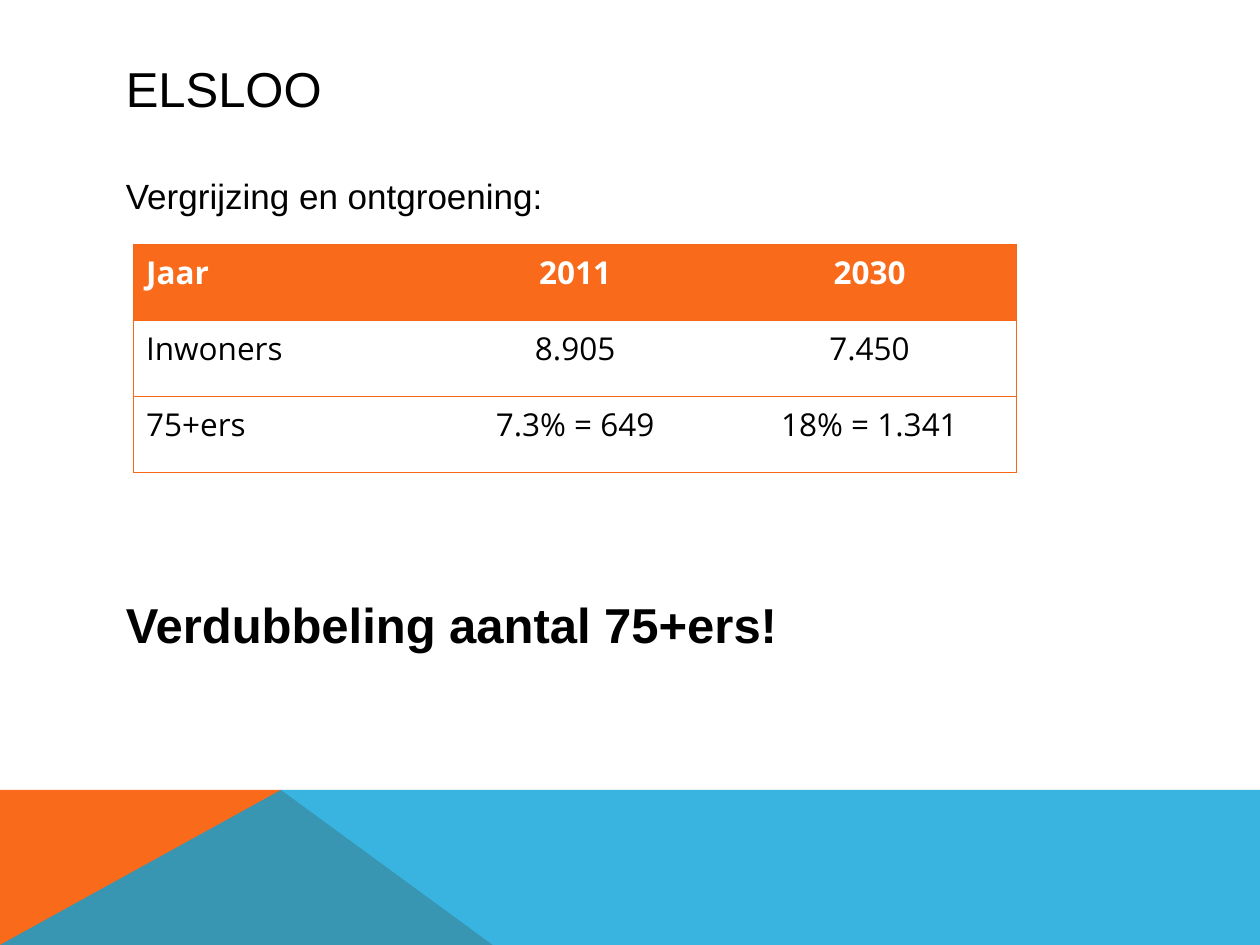
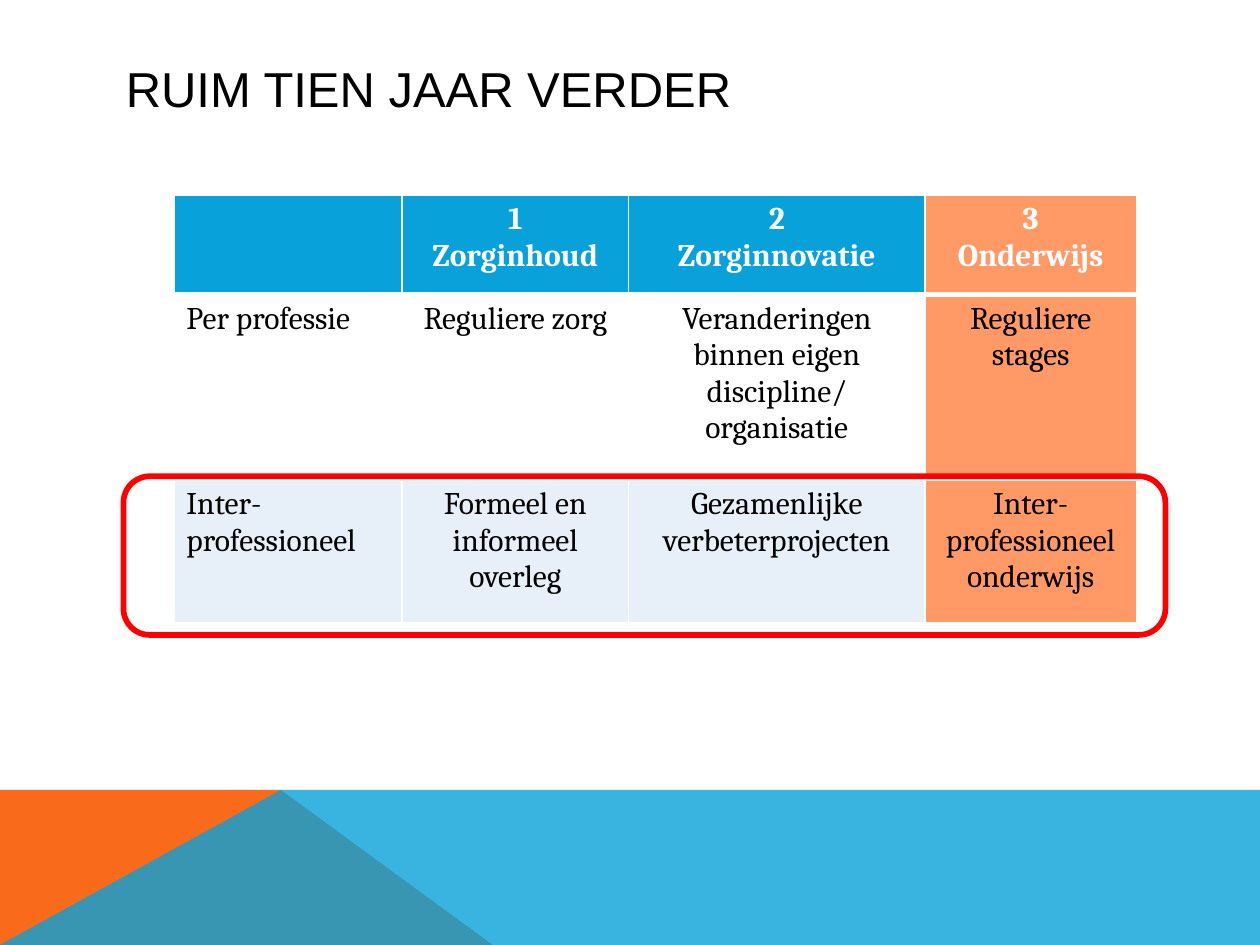
from dataclasses import dataclass
from lxml import etree
from pptx import Presentation
from pptx.dml.color import RGBColor
from pptx.enum.shapes import MSO_SHAPE
from pptx.enum.text import MSO_ANCHOR, PP_ALIGN
from pptx.oxml.ns import qn
from pptx.util import Inches, Pt

ROUND = MSO_SHAPE.ROUNDED_RECTANGLE
MIDDLE, TOP = MSO_ANCHOR.MIDDLE, MSO_ANCHOR.TOP
LEFT, CENTER = PP_ALIGN.LEFT, PP_ALIGN.CENTER


@dataclass(frozen=True)
class Theme:
    black: str = "000000"
    white: str = "FFFFFF"
    orange: str = "F96A1B"
    edge: str = "F96615"
    blue: str = "08A1D9"
    peach: str = "FF9966"
    pale: str = "E7F0F8"
    red: str = "FF0000"
    sans: str = "Arial"
    open: str = "Open Sans"
    serif: str = "Cambria"
    big: int = 28
    lead: int = 20
    cell: int = 18


T = Theme()

# Content
AGING = {
    "title": "ELSLOO",
    "lead": "Vergrijzing en ontgroening:",
    "claim": "Verdubbeling aantal 75+ers!",
    "rows": [
        ("Jaar", "2011", "2030"),
        ("Inwoners", "8.905", "7.450"),
        ("75+ers", "7.3% = 649", "18% = 1.341"),
    ],
}
CARE = {
    "title": "RUIM TIEN JAAR VERDER",
    "rows": [
        ("", "1\nZorginhoud", "2\nZorginnovatie", "3\nOnderwijs"),
        ("Per professie", "Reguliere zorg",
         "Veranderingen binnen eigen discipline/\norganisatie", "Reguliere stages"),
        ("Inter-professioneel", "Formeel en informeel overleg",
         "Gezamenlijke verbeterprojecten", "Inter-professioneel onderwijs"),
    ],
}

# Places, in inches
TITLE = (0.9, 0.4, 8.22, 0.6)
BODY = (0.9, 1.2, 8.22, 4.04)
FRAME = (0.98, 3.78, 8.27, 1.26)
BASE, BAND, PEAK, FOOT, WIDE = 7.5, 6.27, 2.23, 3.91, 10
WEDGE = [(0, BASE), (0, BAND), (PEAK, BAND), (FOOT, BASE)]
SWEEP = [(0, BASE), (PEAK, BAND), (WIDE, BAND), (WIDE, BASE)]


def color(code):
    return RGBColor.from_string(code)


def style(para, font, size, code=T.black, bold=False):
    for run in para.runs:
        run.font.name, run.font.size, run.font.bold = font, Pt(size), bold
        run.font.color.rgb = color(code)


def add_text(slide, box, text, anchor=TOP):
    frame = slide.shapes.add_textbox(*map(Inches, box)).text_frame
    frame.word_wrap = True
    frame.vertical_anchor = anchor
    frame.text = text
    return frame.paragraphs


def add_area(slide, points, code, alpha=None):
    start, *rest = [(Inches(x), Inches(y)) for x, y in points]
    pen = slide.shapes.build_freeform(*start)
    pen.add_line_segments(rest, close=True)
    area = pen.convert_to_shape()
    area.shadow.inherit = False
    area.line.fill.background()
    area.fill.solid()
    area.fill.fore_color.rgb = color(code)
    if alpha:
        tint = area.fill._xPr.find(qn("a:solidFill"))[0]
        etree.SubElement(tint, qn("a:alpha"), val=str(alpha * 1000))


def add_page(deck, title):
    """Add a slide with the shared band and title."""
    slide = deck.slides.add_slide(deck.slide_layouts[6])
    add_area(slide, WEDGE, T.orange)
    add_area(slide, SWEEP, T.blue, 80)
    style(add_text(slide, TITLE, title, MIDDLE)[0], T.sans, T.big)
    return slide


def set_edges(cell, edges):
    """Draw the sides L, R, T, B; each is (colour, points) or None."""
    props = cell._tc.get_or_add_tcPr()
    for side in "LRTB":
        edge = edges[side]
        line = etree.SubElement(props, qn("a:ln" + side))
        if edge:
            line.set("w", str(Pt(edge[1])))
            fill = etree.SubElement(line, qn("a:solidFill"))
            etree.SubElement(fill, qn("a:srgbClr"), val=edge[0])
        else:
            etree.SubElement(line, qn("a:noFill"))


def add_grid(slide, spot, rows, widths, heights, font, fill_of, edges_of):
    size = (sum(widths), sum(heights))
    table = slide.shapes.add_table(
        len(rows), len(widths), *map(Inches, spot + size)).table
    table.first_row = table.horz_banding = False
    for col, width in zip(table.columns, widths):
        col.width = Inches(width)
    for r, (row, height) in enumerate(zip(rows, heights)):
        table.rows[r].height = Inches(height)
        for c, text in enumerate(row):
            cell = table.cell(r, c)
            set_edges(cell, edges_of(r, c))
            code = fill_of(r, c)
            if code:
                cell.fill.solid()
                cell.fill.fore_color.rgb = color(code)
            else:
                cell.fill.background()
            cell.text_frame.text = text
            for para in cell.text_frame.paragraphs:
                para.alignment = CENTER if c else LEFT
                style(para, font, T.cell, T.black if r else T.white, r == 0)


def aging_fill(r, c):
    return None if r else T.orange


def aging_edges(r, c):
    line = (T.edge, 0.75)
    return {"L": None if c else line, "R": line if c == 2 else None,
            "T": line, "B": line}


def care_fill(r, c):
    return T.peach if c == 3 else (T.blue, None, T.pale)[r]


def care_edges(r, c):
    thin, thick = (T.white, 1), (T.white, 3)
    return {"L": thin, "R": thin, "T": thick if r == 1 else thin,
            "B": thin if r else thick}


def add_aging(deck):
    slide = add_page(deck, AGING["title"])
    lead, claim = add_text(slide, BODY, AGING["lead"] + "\n" + AGING["claim"])
    lead.line_spacing = claim.line_spacing = 1.4
    claim.space_before = Pt(203)
    style(lead, T.sans, T.lead)
    style(claim, T.sans, T.big, bold=True)
    add_grid(slide, (1.06, 1.94), AGING["rows"], [7.01 / 3] * 3, [1.81 / 3] * 3,
             T.open, aging_fill, aging_edges)


def add_care(deck):
    slide = add_page(deck, CARE["title"])
    add_grid(slide, (1.38, 1.55), CARE["rows"], [1.81, 1.8, 2.35, 1.68],
             [0.79, 1.47, 1.13], T.serif, care_fill, care_edges)
    frame = slide.shapes.add_shape(ROUND, *map(Inches, FRAME))
    frame.shadow.inherit = False
    frame.fill.background()
    frame.line.color.rgb = color(T.red)
    frame.line.width = Pt(3.25)


def main():
    deck = Presentation()
    deck.slide_width, deck.slide_height = Inches(WIDE), Inches(BASE)
    add_aging(deck)
    add_care(deck)
    deck.save("out.pptx")


if __name__ == "__main__":
    main()
